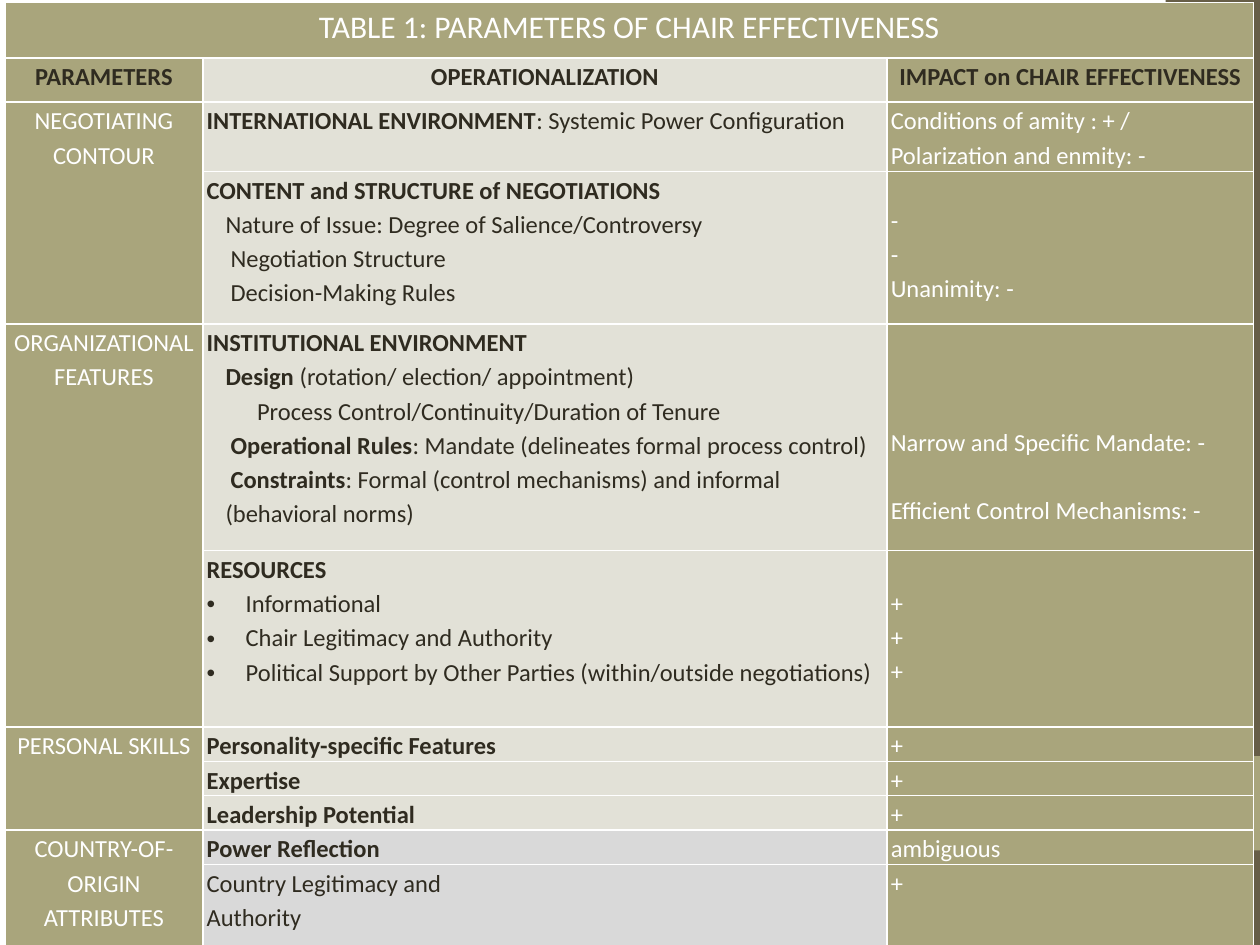
from lxml.etree import SubElement
from pptx import Presentation
from pptx.dml.color import RGBColor
from pptx.enum.shapes import MSO_SHAPE
from pptx.enum.text import PP_ALIGN
from pptx.oxml.ns import qn
from pptx.util import Inches, Pt

WHITE = RGBColor(0xFF, 0xFF, 0xFF)
INK = RGBColor(0x2F, 0x2B, 0x20)
OLIVE = RGBColor(0xA9, 0xA5, 0x7C)
BROWN = RGBColor(0x67, 0x5E, 0x47)
PALE = RGBColor(0xE2, 0xE1, 0xD7)
GREY = RGBColor(0xD9, 0xD9, 0xD9)

COLS = [1.57, 5.43, 2.91]
ROWS = [0.44, 0.35, 0.55, 1.21, 1.8, 1.4, 0.27, 0.27, 0.27, 0.27, 0.66]
GAP = 19.65
PLAIN, INSET, SHIFT, DEEP, BULLET = (0, 0), (0.15, 0), (0.15, 0.04), (0.4, 0), (0.31, -0.31)


def style(cell, fill, top=0):
    cell.fill.solid()
    cell.fill.fore_color.rgb = fill
    cell.margin_left = cell.margin_right = Inches(0.03)
    cell.margin_top, cell.margin_bottom = Inches(top), 0
    props = cell._tc.get_or_add_tcPr()
    for spot, side in enumerate(("a:lnL", "a:lnR", "a:lnT", "a:lnB")):
        line = SubElement(props, qn(side), w=str(Pt(1)))
        paint = SubElement(line, qn("a:solidFill"))
        SubElement(paint, qn("a:srgbClr"), val=str(WHITE))
        props.remove(line)
        props.insert(spot, line)


def write(cell, lines, ink, align=PP_ALIGN.LEFT, size=14, gap=0):
    frame = cell.text_frame
    for n, (form, text) in enumerate(lines):
        para = frame.add_paragraph() if n else frame.paragraphs[0]
        para.alignment, para.line_spacing = align, 1.15
        if n and gap:
            para.space_before = Pt(gap)
        left, first = form
        props = para._p.get_or_add_pPr()
        if left:
            props.set("marL", str(Inches(left)))
            props.set("indent", str(Inches(first)))
        if form == BULLET:
            SubElement(props, qn("a:buFont"), typeface="Arial")
            SubElement(props, qn("a:buChar"), char="•")
        font = para.font
        font.name, font.size = "Calibri", Pt(size)
        font.color.rgb = ink
        parts = [(i % 2 == 1, s) for i, s in enumerate(text.split("*")) if s]
        font.bold = parts[0][0] if len(parts) == 1 else False
        for bold, words in parts:
            run = para.add_run()
            run.text = words
            if len(parts) > 1:
                run.font.bold = bold


deck = Presentation()
deck.slide_width, deck.slide_height = Inches(10), Inches(7.5)
slide = deck.slides.add_slide(deck.slide_layouts[6])
slide.background.fill.solid()
slide.background.fill.fore_color.rgb = WHITE

for top, high, tone in [(0, 7.5, BROWN), (6, 0.75, OLIVE)]:
    bar = slide.shapes.add_shape(MSO_SHAPE.RECTANGLE, Inches(9.25), Inches(top), Inches(0.75), Inches(high))
    bar.shadow.inherit = False
    bar.fill.solid()
    bar.fill.fore_color.rgb = tone
    bar.line.fill.background()

table = slide.shapes.add_table(len(ROWS), len(COLS), Inches(0.04), Inches(0.02),
                               Inches(sum(COLS)), Inches(sum(ROWS))).table
table.first_row = table.horz_banding = False
for col, wide in zip(table.columns, COLS):
    col.width = Inches(wide)
for row, high in zip(table.rows, ROWS):
    row.height = Inches(high)

tops = {3: 0.24, 4: 0.79, 5: 0.27}
for r in range(len(ROWS)):
    middle = OLIVE if r == 0 else PALE if r < 9 else GREY
    for c, fill in enumerate((OLIVE, middle, OLIVE)):
        style(table.cell(r, c), fill, tops.get(r, 0) if c == 2 else 0)

table.cell(0, 0).merge(table.cell(0, 2))
write(table.cell(0, 0), [(PLAIN, "TABLE 1: PARAMETERS OF CHAIR EFFECTIVENESS")], WHITE, PP_ALIGN.CENTER, 18)
for c, text in enumerate(["PARAMETERS", "OPERATIONALIZATION", "IMPACT on CHAIR EFFECTIVENESS"]):
    write(table.cell(1, c), [(PLAIN, f"*{text}*")], INK, PP_ALIGN.CENTER)

groups = [
    (2, 3, "NEGOTIATING CONTOUR"),
    (4, 5, "ORGANIZATIONAL FEATURES"),
    (6, 8, "PERSONAL SKILLS"),
    (9, 10, "COUNTRY-OF-ORIGIN ATTRIBUTES"),
]
for start, end, text in groups:
    table.cell(start, 0).merge(table.cell(end, 0))
    write(table.cell(start, 0), [(PLAIN, text)], WHITE, PP_ALIGN.CENTER)

body = [
    ([(PLAIN, "*INTERNATIONAL ENVIRONMENT*: Systemic Power Configuration")],
     ["Conditions of amity : + / Polarization and enmity: -"]),
    ([(PLAIN, "*CONTENT and STRUCTURE of NEGOTIATIONS*"),
      (INSET, "Nature of Issue: Degree of Salience/Controversy"),
      (SHIFT, "Negotiation Structure"),
      (SHIFT, "Decision-Making Rules")],
     ["-", "-", "Unanimity: -"]),
    ([(PLAIN, "*INSTITUTIONAL ENVIRONMENT*"),
      (INSET, "*Design* (rotation/ election/ appointment)"),
      (DEEP, "Process Control/Continuity/Duration of Tenure"),
      (SHIFT, "*Operational Rules*: Mandate (delineates formal process control)"),
      (SHIFT, "*Constraints*: Formal (control mechanisms) and informal (behavioral norms)")],
     ["Narrow and Specific Mandate: -", "Efficient Control Mechanisms: -"]),
    ([(PLAIN, "*RESOURCES*"),
      (BULLET, "Informational"),
      (BULLET, "Chair Legitimacy and Authority"),
      (BULLET, "Political Support by Other Parties (within/outside negotiations)")],
     ["+", "+", "+"]),
    ([(PLAIN, "*Personality-specific Features*")], ["+"]),
    ([(PLAIN, "*Expertise*")], ["+"]),
    ([(PLAIN, "*Leadership Potential*")], ["+"]),
    ([(PLAIN, "*Power Reflection*")], ["ambiguous"]),
    ([(PLAIN, "Country Legitimacy and"), (PLAIN, "Authority")], ["+"]),
]
for r, (lines, marks) in enumerate(body, 2):
    write(table.cell(r, 1), lines, INK)
    write(table.cell(r, 2), [(PLAIN, mark) for mark in marks], WHITE, gap=GAP if r == 4 else 0)

deck.save("out.pptx")
